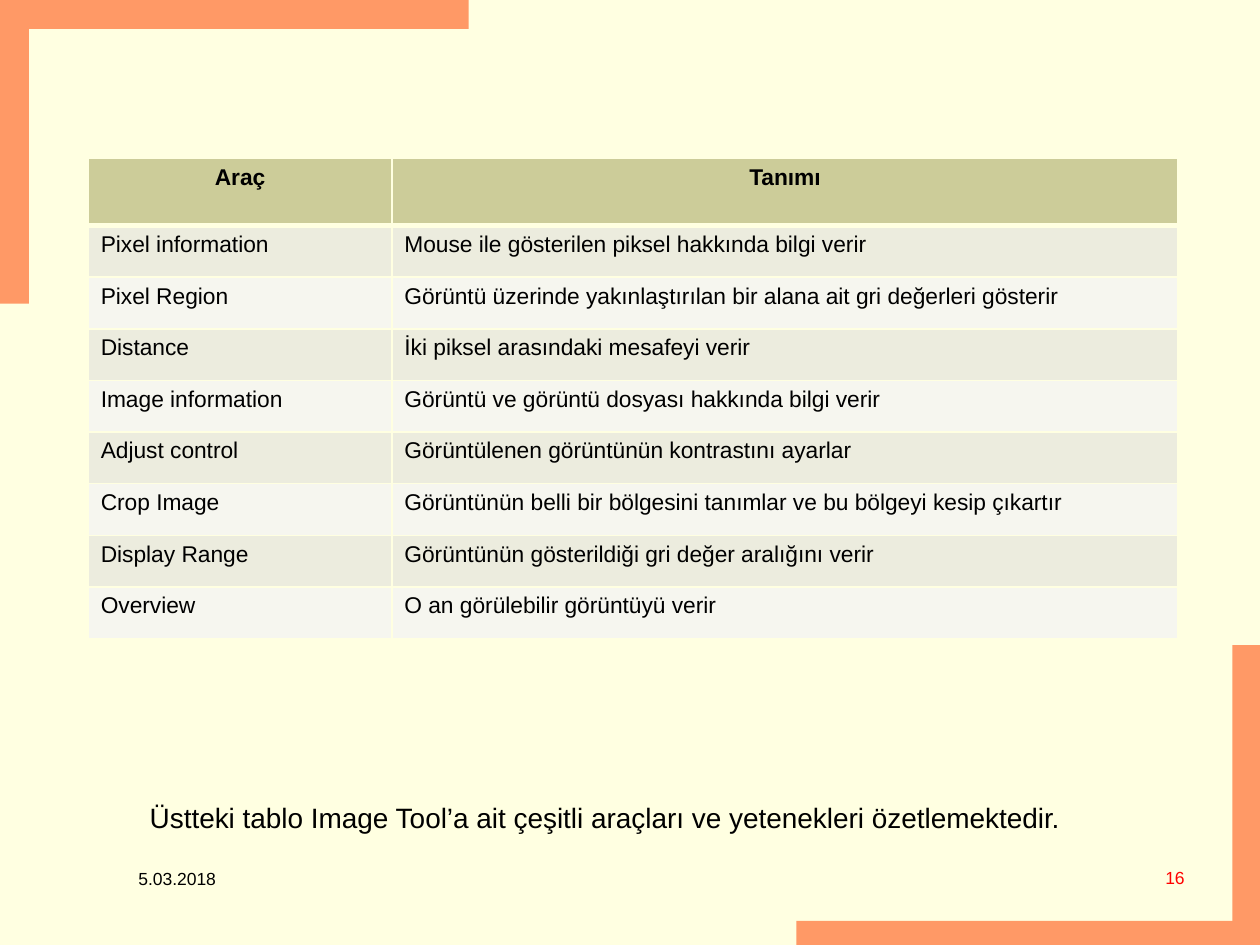
from dataclasses import dataclass

from lxml.etree import SubElement
from pptx import Presentation
from pptx.dml.color import RGBColor
from pptx.enum.shapes import MSO_SHAPE
from pptx.enum.text import PP_ALIGN
from pptx.oxml.ns import qn
from pptx.util import Inches, Pt


@dataclass(frozen=True)
class Theme:
    font: str = "Arial"
    background: str = "FFFFE1"
    accent: str = "FF9966"
    header: str = "CCCC99"
    bands: tuple = ("ECECDE", "F6F6EF")
    text: str = "000000"
    number: str = "FF0000"
    footer_size: float = 10
    table_size: float = 13
    caption_size: float = 16
    thin: float = 1
    thick: float = 3


BLANK_LAYOUT = 6
# left, top, width, height
CORNER_BARS = [
    (9.78, 5.12, 0.22, 2.38),
    (0, 0, 0.23, 2.41),
    (0.22, 0, 3.5, 0.23),
    (6.32, 7.31, 3.5, 0.2),
]
TOOLS = [
    ("Araç", "Tanımı"),
    ("Pixel information", "Mouse ile gösterilen piksel hakkında bilgi verir"),
    ("Pixel Region", "Görüntü üzerinde yakınlaştırılan bir alana ait gri değerleri gösterir"),
    ("Distance", "İki piksel arasındaki mesafeyi verir"),
    ("Image information", "Görüntü ve görüntü dosyası hakkında bilgi verir"),
    ("Adjust control", "Görüntülenen görüntünün kontrastını ayarlar"),
    ("Crop Image", "Görüntünün belli bir bölgesini tanımlar ve bu bölgeyi kesip çıkartır"),
    ("Display Range", "Görüntünün gösterildiği gri değer aralığını verir"),
    ("Overview", "O an görülebilir görüntüyü verir"),
]


class SlideBuilder:
    """Holds the theme and the page that elements are added to."""

    def __init__(self, page, theme):
        self.page = page
        self.theme = theme
        self.paint(page.background.fill, theme.background)

    def paint(self, fill, color):
        fill.solid()
        fill.fore_color.rgb = RGBColor.from_string(color)

    def fill_text(self, frame, text, size, color=None, bold=False, **paragraph_format):
        para = frame.paragraphs[0]
        for name, value in paragraph_format.items():
            setattr(para, name, value)
        span = para.add_run()
        span.text = text
        font_format = {"name": self.theme.font, "size": Pt(size), "bold": bold}
        for name, value in font_format.items():
            setattr(span.font, name, value)
        span.font.color.rgb = RGBColor.from_string(color or self.theme.text)

    def bar(self, *bounds):
        shape = self.page.shapes.add_shape(MSO_SHAPE.RECTANGLE, *map(Inches, bounds))
        shape.shadow.inherit = False
        self.paint(shape.fill, self.theme.accent)
        shape.line.fill.background()

    def text(self, bounds, text, size, **text_format):
        box = self.page.shapes.add_textbox(*map(Inches, bounds))
        box.text_frame.word_wrap = True
        self.fill_text(box.text_frame, text, size, **text_format)

    def borders(self, cell, widths):
        """Draw cell edges; widths are points for left, right, top, bottom."""
        properties = cell._tc.get_or_add_tcPr()
        for side, width in zip("LRTB", widths):
            line = SubElement(properties, qn(f"a:ln{side}"), w=str(Pt(width)))
            fill = SubElement(line, qn("a:solidFill"))
            SubElement(fill, qn("a:srgbClr"), val=self.theme.background)

    def table(self, left, top, column_widths, header_height, row_height, rows):
        theme = self.theme
        heights = [header_height] + [row_height] * (len(rows) - 1)
        bounds = (left, top, sum(column_widths), sum(heights))
        table = self.page.shapes.add_table(
            len(rows), len(column_widths), *map(Inches, bounds)).table
        for column, width in zip(table.columns, column_widths):
            column.width = Inches(width)
        for index, (values, height) in enumerate(zip(rows, heights)):
            table.rows[index].height = Inches(height)
            is_header = index == 0
            color = theme.header if is_header else theme.bands[(index - 1) % 2]
            above = theme.thick if index == 1 else theme.thin
            below = theme.thick if is_header else theme.thin
            for cell, value in zip(table.rows[index].cells, values):
                self.borders(cell, (theme.thin, theme.thin, above, below))
                self.paint(cell.fill, color)
                self.fill_text(cell.text_frame, value, theme.table_size, bold=is_header,
                               alignment=PP_ALIGN.CENTER if is_header else PP_ALIGN.LEFT)


def main():
    deck = Presentation()
    deck.slide_width, deck.slide_height = Inches(10), Inches(7.5)
    theme = Theme()
    page = deck.slides.add_slide(deck.slide_layouts[BLANK_LAYOUT])
    builder = SlideBuilder(page, theme)

    for bounds in CORNER_BARS:
        builder.bar(*bounds)
    builder.text((1, 6.84, 2.17, 0.5), "5.03.2018", theme.footer_size)
    builder.text((7.42, 6.83, 2.08, 0.5), "16", theme.footer_size,
                 color=theme.number, alignment=PP_ALIGN.RIGHT)
    builder.text((1.09, 6.17, 7.67, 0.48),
                 "Üstteki tablo Image Tool’a ait çeşitli araçları ve yetenekleri özetlemektedir.",
                 theme.caption_size, line_spacing=1.5)
    builder.table(0.7, 1.26, (2.41, 6.24), 0.53, 0.41, TOOLS)
    deck.save("out.pptx")


if __name__ == "__main__":
    main()
